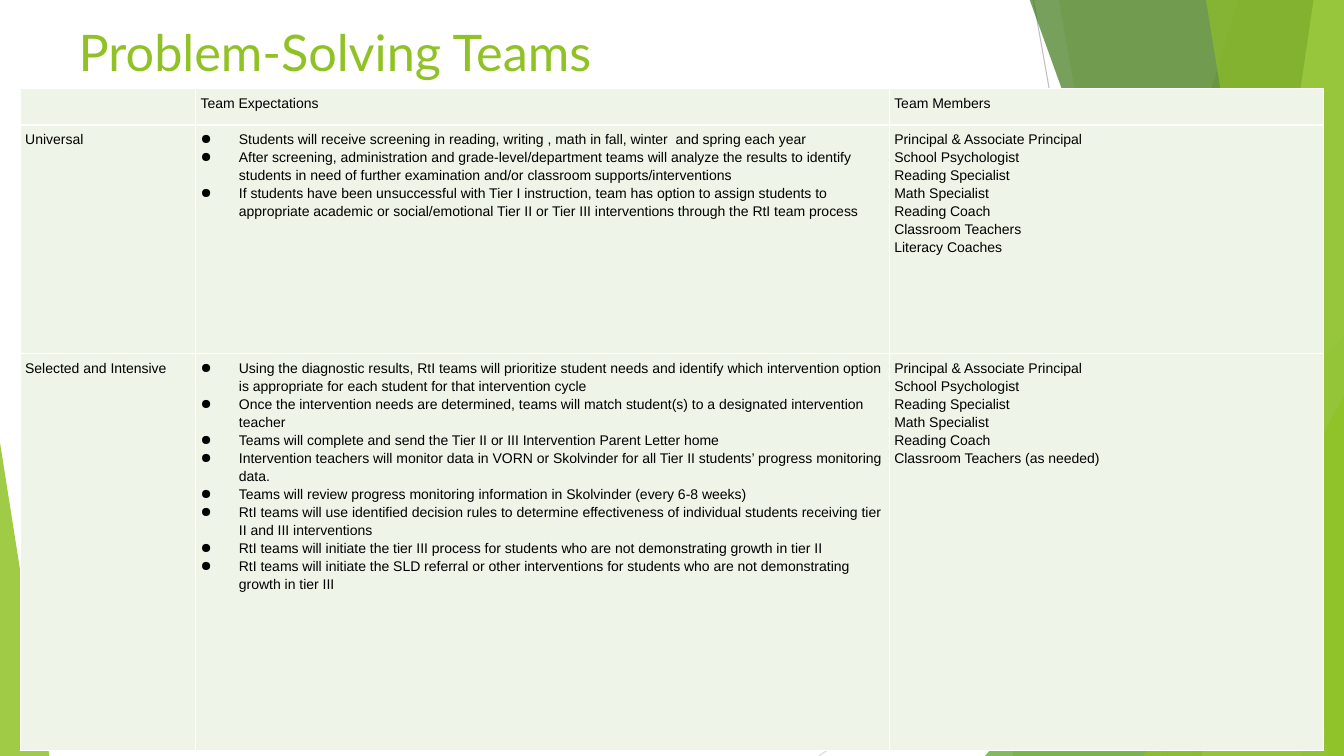
from lxml import etree
from pptx import Presentation
from pptx.dml.color import RGBColor
from pptx.enum.shapes import MSO_CONNECTOR
from pptx.enum.text import MSO_ANCHOR
from pptx.oxml import parse_xml
from pptx.oxml.ns import nsdecls, qn
from pptx.util import Inches, Pt

GREEN = "90C226"
CELL_FILL = "EEF4E7"

RAYS = [
    ((10.25, 0), (11.58, 7.5), "BFBFBF"),
    ((13.33, 4.03), (8.12, 7.5), "D9D9D9"),
]

# Points, colour, opacity in percent
FACETS = [
    ([(12.28, -0.01), (13.33, -0.01), (13.33, 7.5), (10.04, 7.5)], GREEN, 30),
    ([(10.5, -0.01), (13.33, -0.01), (13.33, 7.5), (11.83, 7.5)], GREEN, 20),
    ([(9.77, 7.5), (13.33, 3.33), (13.33, 7.5)], "54A021", 72),
    ([(10.21, -0.01), (13.33, -0.01), (13.33, 7.5), (12.91, 7.5)], "3F7819", 70),
    ([(13.03, -0.01), (13.33, -0.01), (13.33, 7.5), (11.92, 7.5)], "C0E474", 70),
    ([(11.96, -0.01), (13.33, -0.01), (13.33, 7.5), (13.18, 7.5)], GREEN, 65),
    ([(11.34, 7.5), (13.33, 3.93), (13.33, 7.5)], GREEN, 80),
    ([(0, 7.5), (0, 4.39), (0.49, 7.5)], GREEN, 85),
]

COLUMN_WIDTHS = [1.74, 6.88, 4.31]
ROW_HEIGHTS = [0.36, 2.27, 3.94]

CORE_MEMBERS = [
    "Principal & Associate Principal",
    "School Psychologist",
    "Reading Specialist",
    "Math Specialist",
    "Reading Coach",
]
UNIVERSAL_EXPECTATIONS = [
    "Students will receive screening in reading, writing , math in fall, winter  and spring each year",
    "After screening, administration and grade-level/department teams will analyze the results to identify "
    "students in need of further examination and/or classroom supports/interventions",
    "If students have been unsuccessful with Tier I instruction, team has option to assign students to "
    "appropriate academic or social/emotional Tier II or Tier III interventions through the RtI team process",
]
INTENSIVE_EXPECTATIONS = [
    "Using the diagnostic results, RtI teams will prioritize student needs and identify which intervention "
    "option is appropriate for each student for that intervention cycle",
    "Once the intervention needs are determined, teams will match student(s) to a designated intervention teacher",
    "Teams will complete and send the Tier II or III Intervention Parent Letter home",
    "Intervention teachers will monitor data in VORN or Skolvinder for all Tier II students’ progress monitoring data.",
    "Teams will review progress monitoring information in Skolvinder (every 6-8 weeks)",
    "RtI teams will use identified decision rules to determine effectiveness of individual students receiving "
    "tier II and III interventions",
    "RtI teams will initiate the tier III process for students who are not demonstrating growth in tier II",
    "RtI teams will initiate the SLD referral or other interventions for students who are not demonstrating "
    "growth in tier III",
]
TEAM_ROWS = [
    [[], ["Team Expectations"], ["Team Members"]],
    [["Universal"], UNIVERSAL_EXPECTATIONS, CORE_MEMBERS + ["Classroom Teachers", "Literacy Coaches"]],
    [["Selected and Intensive"], INTENSIVE_EXPECTATIONS, CORE_MEMBERS + ["Classroom Teachers (as needed)"]],
]


def rgb(color):
    return RGBColor.from_string(color)


def add_ray(slide, start, end, color):
    ray = slide.shapes.add_connector(
        MSO_CONNECTOR.STRAIGHT, *[Inches(value) for value in start + end])
    ray.line.color.rgb = rgb(color)
    ray.line.width = Pt(0.75)
    etree.SubElement(ray._element.spPr, qn("a:effectLst"))


def add_facet(slide, points, color, opacity):
    corners = [(Inches(x), Inches(y)) for x, y in points]
    builder = slide.shapes.build_freeform(*corners[0])
    builder.add_line_segments(corners[1:], close=True)
    facet = builder.convert_to_shape()
    facet.shadow.inherit = False
    facet.line.fill.background()
    facet.fill.solid()
    facet.fill.fore_color.rgb = rgb(color)
    color_node = facet._element.spPr.find(qn("a:solidFill"))[0]
    etree.SubElement(color_node, qn("a:alpha"), val=str(opacity * 1000))


def format_runs(paragraph, font_name, size, color):
    for run in paragraph.runs:
        run.font.name = font_name
        run.font.size = Pt(size)
        run.font.color.rgb = rgb(color)


def set_margins(target):
    target.margin_left = target.margin_right = Inches(0.05)
    target.margin_top = target.margin_bottom = Inches(0.05)


def add_title(slide, text):
    title = slide.shapes.add_textbox(Inches(0.73), Inches(0.16), Inches(9.4), Inches(0.79))
    frame = title.text_frame
    frame.word_wrap = True
    frame.vertical_anchor = MSO_ANCHOR.TOP
    set_margins(frame)
    frame.text = text
    format_runs(frame.paragraphs[0], "Lato", 36, GREEN)


def add_bullet(paragraph):
    properties = paragraph._p.get_or_add_pPr()
    indent = Inches(0.38)
    properties.set("marL", str(indent))
    properties.set("indent", str(-indent))
    etree.SubElement(properties, qn("a:buChar"), char="●")


def add_borders(cell):
    properties = cell._tc.get_or_add_tcPr()
    for index, side in enumerate(["lnL", "lnR", "lnT", "lnB"]):
        properties.insert(index, parse_xml(
            f'<a:{side} {nsdecls("a")} w="{Pt(1)}"><a:solidFill>'
            f'<a:srgbClr val="FFFFFF"/></a:solidFill></a:{side}>'))


def fill_cell(cell, lines, bulleted):
    cell.fill.solid()
    cell.fill.fore_color.rgb = rgb(CELL_FILL)
    set_margins(cell)
    add_borders(cell)
    cell.text_frame.text = "\n".join(lines)
    for paragraph in cell.text_frame.paragraphs:
        paragraph.line_spacing = 1.15
        format_runs(paragraph, "Arial", 10, "000000")
        if bulleted:
            add_bullet(paragraph)
        if not lines:  # keeps the empty cell from stretching its row
            etree.SubElement(paragraph._p, qn("a:endParaRPr"), sz="1000")


def add_team_table(slide):
    frame = slide.shapes.add_table(
        len(ROW_HEIGHTS), len(COLUMN_WIDTHS), Inches(0.2), Inches(0.88),
        Inches(sum(COLUMN_WIDTHS)), Inches(sum(ROW_HEIGHTS)))
    table = frame.table
    table.first_row = table.horz_banding = False
    for column, width in zip(table.columns, COLUMN_WIDTHS):
        column.width = Inches(width)
    for row, height in zip(table.rows, ROW_HEIGHTS):
        row.height = Inches(height)
    for row_index, cells in enumerate(TEAM_ROWS):
        for column_index, lines in enumerate(cells):
            bulleted = row_index > 0 and column_index == 1
            fill_cell(table.cell(row_index, column_index), lines, bulleted)


def main():
    presentation = Presentation()
    presentation.slide_width = Inches(13.33)
    presentation.slide_height = Inches(7.5)
    slide = presentation.slides.add_slide(presentation.slide_layouts[6])
    for ray in RAYS:
        add_ray(slide, *ray)
    for facet in FACETS:
        add_facet(slide, *facet)
    add_title(slide, "Problem-Solving Teams")
    add_team_table(slide)
    presentation.save("out.pptx")


if __name__ == "__main__":
    main()
